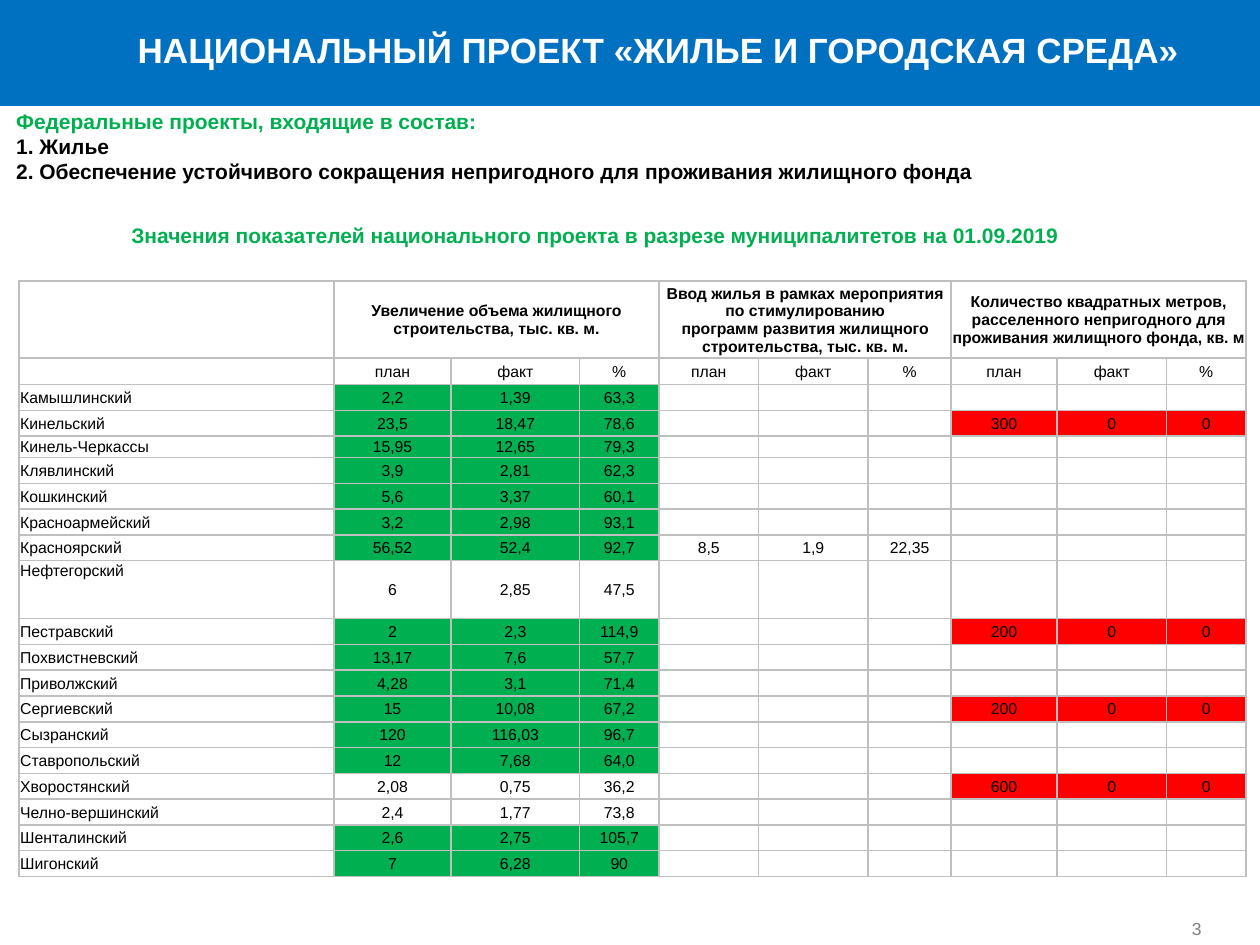
from dataclasses import dataclass

from lxml.etree import SubElement
from pptx import Presentation
from pptx.dml.color import RGBColor
from pptx.enum.shapes import MSO_SHAPE
from pptx.enum.text import MSO_ANCHOR, PP_ALIGN
from pptx.oxml.ns import qn
from pptx.util import Inches, Pt


@dataclass(frozen=True)
class Theme:
    font: str = "Arial"
    blue: str = "0070C1"
    green: str = "00B050"
    red: str = "FF0000"
    white: str = "FFFFFF"
    black: str = "000000"
    gray: str = "808080"
    border: str = "BFBFBF"
    title_size: int = 20
    text_size: int = 12
    number_size: int = 10
    table_size: int = 9


THEME = Theme()

# Content
TITLE = "НАЦИОНАЛЬНЫЙ ПРОЕКТ «ЖИЛЬЕ И ГОРОДСКАЯ СРЕДА»"
PROJECTS_HEADING = "Федеральные проекты, входящие в состав:"
PROJECTS = [
    "1. Жилье",
    "2. Обеспечение устойчивого сокращения непригодного для проживания жилищного фонда",
]
TABLE_HEADING = "Значения показателей национального проекта в разрезе муниципалитетов на 01.09.2019"
SLIDE_NUMBER = "3"

INDICATORS = [
    ["Увеличение объема жилищного строительства, тыс. кв. м."],
    ["Ввод жилья в рамках мероприятия по стимулированию",
     "программ развития жилищного строительства, тыс. кв. м."],
    ["Количество квадратных метров, расселенного непригодного для проживания жилищного фонда, кв. м"],
]
MEASURES = ["план", "факт", "%"]
HOUSING = [
    ("Камышлинский", "2,2", "1,39", "63,3"),
    ("Кинельский", "23,5", "18,47", "78,6"),
    ("Кинель-Черкассы", "15,95", "12,65", "79,3"),
    ("Клявлинский", "3,9", "2,81", "62,3"),
    ("Кошкинский", "5,6", "3,37", "60,1"),
    ("Красноармейский", "3,2", "2,98", "93,1"),
    ("Красноярский", "56,52", "52,4", "92,7"),
    ("Нефтегорский", "6", "2,85", "47,5"),
    ("Пестравский", "2", "2,3", "114,9"),
    ("Похвистневский", "13,17", "7,6", "57,7"),
    ("Приволжский", "4,28", "3,1", "71,4"),
    ("Сергиевский", "15", "10,08", "67,2"),
    ("Сызранский", "120", "116,03", "96,7"),
    ("Ставропольский", "12", "7,68", "64,0"),
    ("Хворостянский", "2,08", "0,75", "36,2"),
    ("Челно-вершинский", "2,4", "1,77", "73,8"),
    ("Шенталинский", "2,6", "2,75", "105,7"),
    ("Шигонский", "7", "6,28", "90"),
]
NOT_HIGHLIGHTED = {"Нефтегорский", "Хворостянский", "Челно-вершинский"}
STIMULATION = {"Красноярский": ("8,5", "1,9", "22,35")}
RESETTLEMENT_PLAN = {"Кинельский": "300", "Пестравский": "200",
                     "Сергиевский": "200", "Хворостянский": "600"}

# Table geometry, in inches
TABLE_LEFT, TABLE_TOP, TABLE_HEIGHT = 0.15, 2.23, 4.73
COLUMN_WIDTHS = [2.5, 0.93, 1.02, 0.63, 0.79, 0.87, 0.66, 0.84, 0.87, 0.63]
HEADER_HEIGHTS = [0.61, 0.21]
SPECIAL_HEIGHTS = {"Кинель-Черкассы": 0.17, "Нефтегорский": 0.46}


def write_text(frame, lines, size=THEME.table_size, color=THEME.black, bold=False,
               align=PP_ALIGN.LEFT):
    """Fill a text frame; a line is a string or a (string, color) pair."""
    for index, line in enumerate(lines):
        text, line_color = line if isinstance(line, tuple) else (line, color)
        paragraph = frame.paragraphs[0] if index == 0 else frame.add_paragraph()
        paragraph.alignment = align
        run = paragraph.add_run()
        run.text = text
        run.font.name = THEME.font
        run.font.size = Pt(size)
        run.font.bold = bold
        run.font.color.rgb = RGBColor.from_string(line_color)


def add_text(slide, box, lines, wrap=True, inset=0.1, anchor=MSO_ANCHOR.TOP, **text_format):
    frame = slide.shapes.add_textbox(*map(Inches, box)).text_frame
    frame.word_wrap = wrap
    frame.vertical_anchor = anchor
    frame.margin_left = frame.margin_right = Inches(inset)
    write_text(frame, lines, **text_format)


def add_borders(cell):
    properties = cell._tc.get_or_add_tcPr()
    for position, side in enumerate(("lnL", "lnR", "lnT", "lnB")):
        line = properties.makeelement(qn(f"a:{side}"), {"w": str(Pt(1))})
        properties.insert(position, line)
        SubElement(SubElement(line, qn("a:solidFill")), qn("a:srgbClr"), val=THEME.border)


def set_cell(cell, lines=(), fill=None, align=PP_ALIGN.CENTER, anchor=MSO_ANCHOR.MIDDLE,
             bold=False):
    cell.margin_left = cell.margin_right = cell.margin_top = Inches(0.01)
    cell.margin_bottom = 0
    cell.vertical_anchor = anchor
    if fill:
        cell.fill.solid()
        cell.fill.fore_color.rgb = RGBColor.from_string(fill)
    else:
        cell.fill.background()
    add_borders(cell)
    if lines:
        write_text(cell.text_frame, lines, bold=bold, align=align)
    else:
        # Small type keeps an empty row from growing
        SubElement(cell.text_frame.paragraphs[0]._p, qn("a:endParaRPr"),
                   sz=str(THEME.table_size * 100))


def add_indicator_table(slide):
    row_count = len(HEADER_HEIGHTS) + len(HOUSING)
    fixed = sum(HEADER_HEIGHTS) + sum(SPECIAL_HEIGHTS.values())
    row_height = (TABLE_HEIGHT - fixed) / (len(HOUSING) - len(SPECIAL_HEIGHTS))
    heights = HEADER_HEIGHTS + [SPECIAL_HEIGHTS.get(row[0], row_height) for row in HOUSING]
    table = slide.shapes.add_table(
        row_count, len(COLUMN_WIDTHS), Inches(TABLE_LEFT), Inches(TABLE_TOP),
        Inches(sum(COLUMN_WIDTHS)), Inches(TABLE_HEIGHT)).table
    table.first_row = table.horz_banding = False
    for column, width in zip(table.columns, COLUMN_WIDTHS):
        column.width = Inches(width)
    for row, height in zip(table.rows, heights):
        row.height = Inches(height)

    # Two header rows
    group_size = len(MEASURES)
    for row in range(2):
        set_cell(table.cell(row, 0), fill=THEME.white)
    for group, heading in enumerate(INDICATORS):
        first = 1 + group * group_size
        for offset, measure in enumerate(MEASURES):
            set_cell(table.cell(0, first + offset), heading if offset == 0 else (),
                     fill=THEME.white, bold=True)
            set_cell(table.cell(1, first + offset), [measure], fill=THEME.white)
        table.cell(0, first).merge(table.cell(0, first + group_size - 1))

    # Municipalities
    empty = ("",) * group_size
    for row, (name, *housing) in enumerate(HOUSING, start=len(HEADER_HEIGHTS)):
        tall = SPECIAL_HEIGHTS.get(name, 0) > row_height
        set_cell(table.cell(row, 0), [name], fill=THEME.white, align=PP_ALIGN.LEFT,
                 anchor=MSO_ANCHOR.TOP if tall else MSO_ANCHOR.MIDDLE)
        plan = RESETTLEMENT_PLAN.get(name)
        groups = [
            (housing, None if name in NOT_HIGHLIGHTED else THEME.green),
            (STIMULATION.get(name, empty), None),
            ((plan, "0", "0") if plan else empty, THEME.red if plan else None),
        ]
        cells = [(value, fill) for values, fill in groups for value in values]
        for column, (value, fill) in enumerate(cells, start=1):
            set_cell(table.cell(row, column), [value] if value else (), fill=fill)


def main():
    presentation = Presentation()
    presentation.slide_width, presentation.slide_height = Inches(10), Inches(7.5)
    slide = presentation.slides.add_slide(presentation.slide_layouts[6])

    # Title band
    band = slide.shapes.add_shape(MSO_SHAPE.RECTANGLE, 0, 0, Inches(10), Inches(0.84))
    band.shadow.inherit = False
    band.fill.solid()
    band.fill.fore_color.rgb = RGBColor.from_string(THEME.blue)
    band.line.fill.background()

    # Slide number, project list and title
    add_text(slide, (9.41, 7.1, 0.56, 0.4), [SLIDE_NUMBER], wrap=False, inset=0.05,
             anchor=MSO_ANCHOR.BOTTOM, size=THEME.number_size, color=THEME.gray)
    add_text(slide, (0.03, 0.81, 9.97, 0.91), [(PROJECTS_HEADING, THEME.green), *PROJECTS],
             size=THEME.text_size, bold=True)
    add_text(slide, (1.01, 0.18, 8.43, 0.44), [TITLE], wrap=False, inset=0.05,
             size=THEME.title_size, color=THEME.white, bold=True, align=PP_ALIGN.CENTER)

    # Indicators by municipality
    add_indicator_table(slide)
    add_text(slide, (0.12, 1.72, 9.21, 0.3), [TABLE_HEADING], size=THEME.text_size,
             color=THEME.green, bold=True, align=PP_ALIGN.CENTER)

    presentation.save("out.pptx")


if __name__ == "__main__":
    main()
